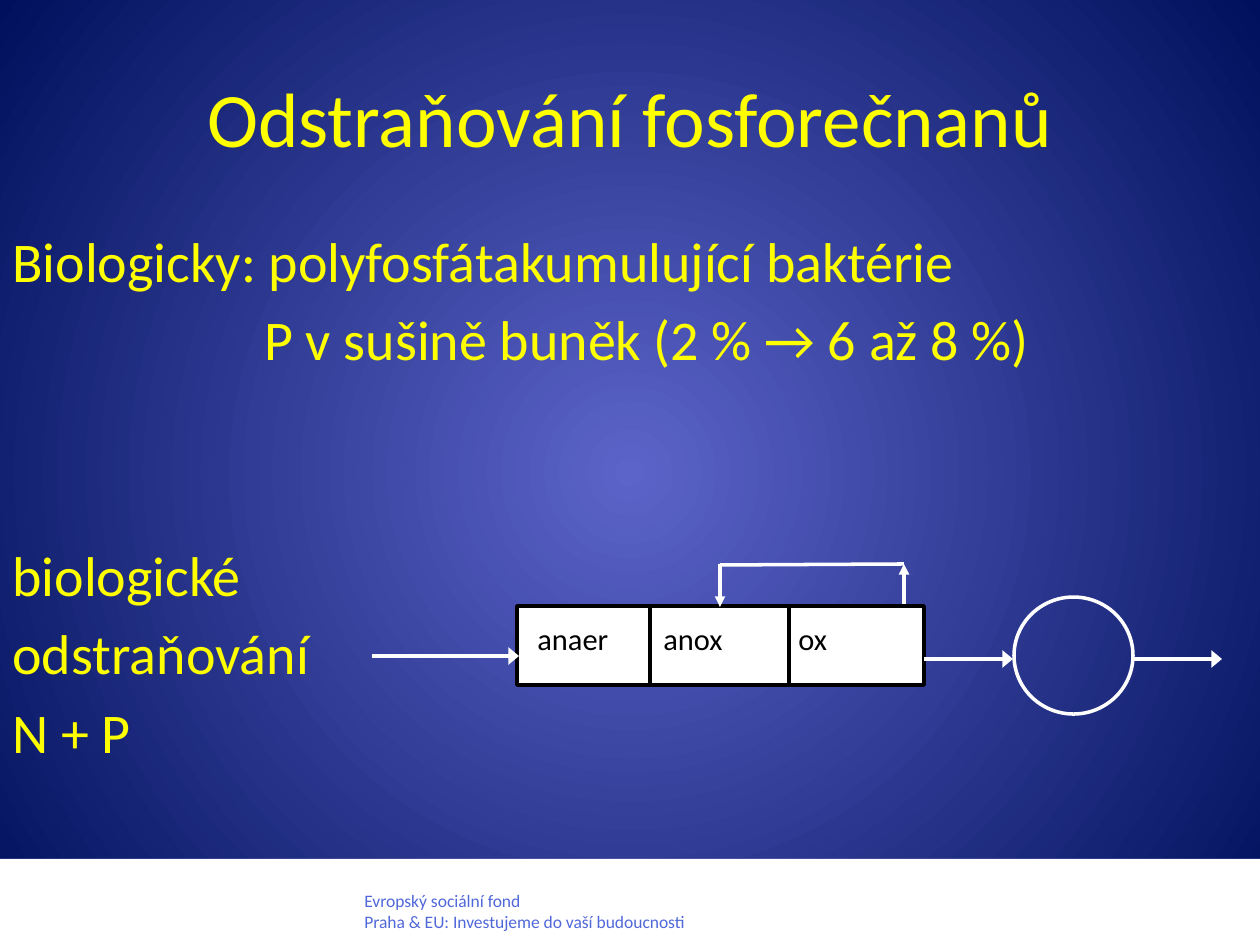
from pptx import Presentation
from pptx.dml.color import RGBColor
from pptx.enum.shapes import MSO_CONNECTOR, MSO_SHAPE
from pptx.enum.text import MSO_ANCHOR, PP_ALIGN
from pptx.oxml.ns import qn
from pptx.util import Emu, Pt
from lxml import etree

STRAIGHT = MSO_CONNECTOR.STRAIGHT
RECTANGLE, OVAL = MSO_SHAPE.RECTANGLE, MSO_SHAPE.OVAL
TOP, MIDDLE = MSO_ANCHOR.TOP, MSO_ANCHOR.MIDDLE
LEFT, CENTER = PP_ALIGN.LEFT, PP_ALIGN.CENTER

WHITE = RGBColor(0xFF, 0xFF, 0xFF)
BLACK = RGBColor(0x00, 0x00, 0x00)
YELLOW = RGBColor(0xFF, 0xFF, 0x00)
FOOTER_BLUE = RGBColor(0x51, 0x68, 0xD9)
GLOW_BLUE = RGBColor(0x5C, 0x64, 0xC9)
NAVY = RGBColor(0x00, 0x10, 0x5C)

PX_PER_INCH = 126
FONT = "Calibri"
LINE_WIDTH = Pt(2)
BODY_GAP = 6.5


def px(length):
    return Emu(round(length * 914400 / PX_PER_INCH))


class SlideBuilder:
    def __init__(self, page):
        self.page = page

    def background(self, inner, outer):
        fill = self.page.background.fill
        fill.gradient()
        for stop, color in zip(fill.gradient_stops, (inner, outer)):
            stop.color.rgb = color
        gradient = self.page.element.find(".//" + qn("a:gradFill"))
        gradient.remove(gradient.find(qn("a:lin")))
        circle = etree.SubElement(gradient, qn("a:path"), path="circle")
        etree.SubElement(circle, qn("a:fillToRect"),
                         dict.fromkeys("ltrb", "50000"))

    def shape(self, kind, left, top, width, height, fill=None, line=None):
        shape = self.page.shapes.add_shape(
            kind, px(left), px(top), px(width), px(height))
        shape.shadow.inherit = False
        if fill is None:
            shape.fill.background()
        else:
            shape.fill.solid()
            shape.fill.fore_color.rgb = fill
        if line is None:
            shape.line.fill.background()
        else:
            shape.line.color.rgb = line
            shape.line.width = LINE_WIDTH

    def text(self, left, top, width, height, lines, size, color,
             align=LEFT, anchor=TOP, gap=0, tabs=()):
        box = self.page.shapes.add_textbox(
            px(left), px(top), px(width), px(height))
        frame = box.text_frame
        frame.word_wrap = True
        frame.vertical_anchor = anchor
        for index, line in enumerate(lines):
            para = frame.add_paragraph() if index else frame.paragraphs[0]
            para.alignment = align
            if index:
                para.space_before = Pt(gap)
            if tabs:
                stops = etree.SubElement(
                    para._p.get_or_add_pPr(), qn("a:tabLst"))
                for tab in tabs:
                    etree.SubElement(stops, qn("a:tab"),
                                     pos=str(px(tab)), algn="l")
            span = para.add_run()
            span.text = line
            span.font.name = FONT
            span.font.size = Pt(size)
            span.font.color.rgb = color

    def line(self, start, end, color=WHITE, arrow=None):
        connector = self.page.shapes.add_connector(
            STRAIGHT, *map(px, start + end))
        connector.line.color.rgb = color
        connector.line.width = LINE_WIDTH
        if arrow:
            outline = connector.line._get_or_add_ln()
            etree.SubElement(outline, qn("a:tailEnd"),
                             type="triangle", w=arrow)
        etree.SubElement(connector._element.spPr, qn("a:effectLst"))


def main():
    deck = Presentation()
    deck.slide_width, deck.slide_height = px(1260), px(945)
    slide = SlideBuilder(deck.slides.add_slide(deck.slide_layouts[6]))

    slide.background(GLOW_BLUE, NAVY)
    slide.shape(RECTANGLE, 0, 859, 1260, 86, fill=WHITE)
    slide.text(352, 884, 476, 55,
               ["Evropský sociální fond",
                "Praha & EU: Investujeme do vaší budoucnosti"],
               10, FOOTER_BLUE)

    slide.text(63, 38, 1134, 158, ["Odstraňování fosforečnanů"],
               44, YELLOW, CENTER, MIDDLE)
    slide.text(0, 220, 1197, 160,
               ["Biologicky: polyfosfátakumulující baktérie",
                "\t\tP v sušině buněk (2 % → 6 až 8 %)"],
               32, YELLOW, gap=BODY_GAP, tabs=(126, 252))
    slide.text(0, 534, 360, 240, ["biologické", "odstraňování", "N + P"],
               32, YELLOW, gap=BODY_GAP)

    tank_left, tank_top, tank_right, tank_bottom = 517, 606, 924, 685
    slide.shape(RECTANGLE, tank_left, tank_top, tank_right - tank_left,
                tank_bottom - tank_top, fill=WHITE, line=BLACK)
    for divider in (650, 789):
        slide.line((divider, tank_top), (divider, tank_bottom), BLACK)
    for label, left in (("anaer", 525), ("anox", 651), ("ox", 786)):
        slide.text(left, 614, 120, 60, [label], 17.4, BLACK)

    recycle_from, recycle_to, recycle_top = 904, 720, 564
    slide.line((recycle_to, recycle_top + 1), (recycle_from, recycle_top))
    slide.line((recycle_from, 604), (recycle_from, recycle_top), arrow="med")
    slide.line((recycle_to, recycle_top), (recycle_to, 607), arrow="med")

    slide.shape(OVAL, 1014, 597, 119, 117, line=WHITE)
    for start, end, level in ((372, 519, 656), (924, 1013, 659),
                              (1133, 1222, 659)):
        slide.line((start, level), (end, level), arrow="lg")

    deck.save("out.pptx")


if __name__ == "__main__":
    main()
